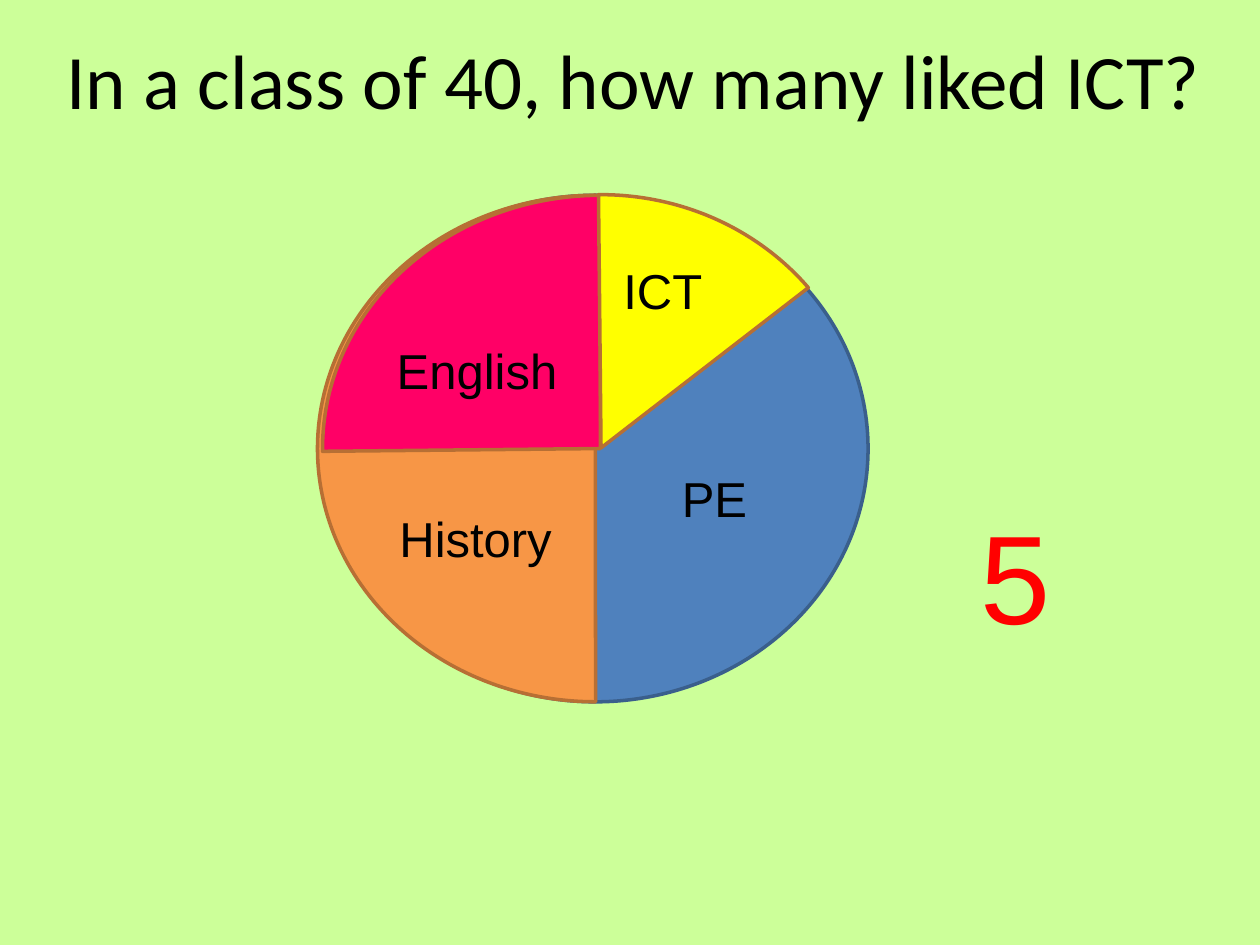
from pptx import Presentation
from pptx.dml.color import RGBColor
from pptx.enum.shapes import MSO_SHAPE
from pptx.enum.text import MSO_AUTO_SIZE, PP_ALIGN
from pptx.util import Inches, Pt


def color(hex_value):
    return RGBColor.from_string(hex_value)


def add_filled(page, kind, place, fill, line):
    shape = page.shapes.add_shape(kind, *map(Inches, place))
    shape.shadow.inherit = False
    shape.fill.solid()
    shape.fill.fore_color.rgb = color(fill)
    shape.line.color.rgb = color(line)
    shape.line.width = Pt(2)
    return shape


def add_slice(page, place, fill, start, end, rotation=0):
    """Add a pie slice running clockwise between two angles in degrees."""
    pie = add_filled(page, MSO_SHAPE.PIE, place, fill, "B76F34")
    # One degree is 60000 units, and adjustments count in 100000 units
    pie.adjustments[0] = start * 0.6
    pie.adjustments[1] = end * 0.6
    pie.rotation = rotation


def add_text(page, place, text, size, font="Arial", ink="000000",
             align=PP_ALIGN.LEFT, wrap=True):
    box = page.shapes.add_textbox(*map(Inches, place))
    frame = box.text_frame
    frame.word_wrap = wrap
    frame.auto_size = MSO_AUTO_SIZE.SHAPE_TO_FIT_TEXT
    para = frame.paragraphs[0]
    para.alignment = align
    span = para.add_run()
    span.text = text
    span.font.size = Pt(size)
    span.font.name = font
    span.font.color.rgb = color(ink)


def add_label(page, place, text):
    add_text(page, place, text, 28, align=PP_ALIGN.CENTER, wrap=False)


def main():
    deck = Presentation()
    deck.slide_width, deck.slide_height = Inches(10), Inches(7.5)
    page = deck.slides.add_slide(deck.slide_layouts[6])
    page.background.fill.solid()
    page.background.fill.fore_color.rgb = color("CCFF99")

    # Whole circle (PE) and the History slice
    add_filled(page, MSO_SHAPE.OVAL, (2.56, 1.55, 4.33, 4.02), "4F81BD", "3A5F8C")
    add_slice(page, (2.52, 1.55, 4.41, 4.02), "F79646", 89.94, 270)

    # Question
    add_text(page, (0.43, 0.21, 10.08, 0.84),
             "In a class of 40, how many liked ICT?", 44, font="Calibri")

    # English and ICT slices
    add_slice(page, (2.56, 1.55, 4.41, 4.02), "FF0066", 179.43, 270)
    add_slice(page, (2.76, 1.43, 4.02, 4.25), "FFFF00", 179.43, 232.3, rotation=90)

    # Subject labels
    add_label(page, (3.04, 2.65, 1.49, 0.57), "English")
    add_label(page, (4.84, 2.02, 0.84, 0.57), "ICT")
    add_label(page, (3.06, 3.99, 1.43, 0.57), "History")
    add_label(page, (5.31, 3.67, 0.72, 0.57), "PE")

    # Answer
    add_text(page, (7.68, 3.91, 1.73, 1.31), "5", 72, ink="FF0000")

    deck.save("out.pptx")


if __name__ == "__main__":
    main()
